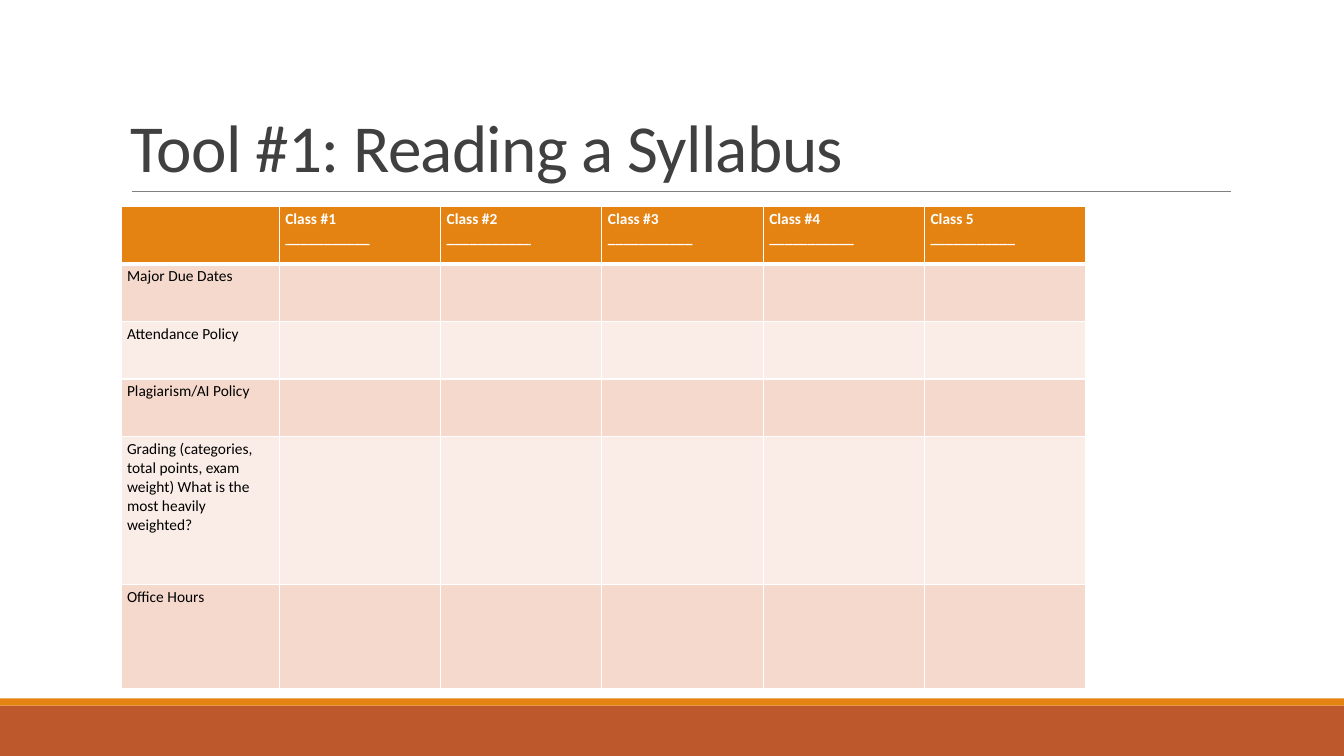
from lxml import etree
from pptx import Presentation
from pptx.dml.color import RGBColor
from pptx.enum.shapes import MSO_CONNECTOR, MSO_SHAPE
from pptx.enum.text import MSO_ANCHOR
from pptx.oxml.ns import qn
from pptx.util import Pt

PX = 9144
RECTANGLE = MSO_SHAPE.RECTANGLE
STRAIGHT = MSO_CONNECTOR.STRAIGHT
BOTTOM = MSO_ANCHOR.BOTTOM
FONT = "Calibri"
COLORS = {
    "rust": "BD582C",
    "orange": "E48312",
    "rule": "808080",
    "title": "404040",
    "white": "FFFFFF",
    "black": "000000",
    "band_dark": "F5D9CC",
    "band_light": "FAEDE7",
}
BLANK_LINE = "_" * 11
CLASSES = ["Class #1", "Class #2", "Class #3", "Class #4", "Class 5"]
TOPICS = [
    "Major Due Dates",
    "Attendance Policy",
    "Plagiarism/AI Policy",
    "Grading (categories, total points, exam weight) What is the most heavily weighted?",
    "Office Hours",
]
COLUMN_WIDTHS = [157] + [160] * len(CLASSES)
ROW_HEIGHTS = [57, 57, 57, 57, 147, 103]


def color(name):
    return RGBColor.from_string(COLORS[name])


class SlideBuilder:
    def __init__(self, slide):
        self.slide = slide
        self.shapes = slide.shapes

    def box(self, *lengths):
        return [length * PX for length in lengths]

    def style_font(self, font, size, color_name, bold=False):
        font.name = FONT
        font.size = Pt(size)
        font.bold = bold
        font.color.rgb = color(color_name)

    def bar(self, left, top, width, height, color_name):
        shape = self.shapes.add_shape(RECTANGLE, *self.box(left, top, width, height))
        shape.shadow.inherit = False
        shape.fill.solid()
        shape.fill.fore_color.rgb = color(color_name)
        shape.line.fill.background()

    def rule(self, left, right, y):
        connector = self.shapes.add_connector(STRAIGHT, *self.box(left, y, right, y))
        connector.line.color.rgb = color("rule")
        connector.line.width = Pt(0.5)
        etree.SubElement(connector._element.spPr, qn("a:effectLst"))

    def title(self, text, left, top, width, height):
        text_box = self.shapes.add_textbox(*self.box(left, top, width, height))
        frame = text_box.text_frame
        frame.word_wrap = True
        frame.vertical_anchor = BOTTOM
        paragraph = frame.paragraphs[0]
        paragraph.text = text
        paragraph.line_spacing = 0.85
        self.style_font(paragraph.font, 48, "title")
        paragraph.runs[0]._r.get_or_add_rPr().set("spc", "-50")

    def cell_borders(self, cell, top, bottom):
        properties = cell._tc.get_or_add_tcPr()
        sides = {"a:lnL": 1, "a:lnR": 1, "a:lnT": top, "a:lnB": bottom}
        for index, (tag, points) in enumerate(sides.items()):
            border = etree.Element(qn(tag), w=str(Pt(points)))
            fill = etree.SubElement(border, qn("a:solidFill"))
            etree.SubElement(fill, qn("a:srgbClr"), val=COLORS["white"])
            properties.insert(index, border)

    def cell(self, cell, text, fill, text_color, bold, top=1, bottom=1):
        cell.margin_left = cell.margin_right = 6 * PX
        cell.margin_top = cell.margin_bottom = 3 * PX
        cell.fill.solid()
        cell.fill.fore_color.rgb = color(fill)
        cell.text = text
        for paragraph in cell.text_frame.paragraphs:
            self.style_font(paragraph.font, 11, text_color, bold)
        self.cell_borders(cell, top, bottom)

    def table(self, rows, left, top, widths, heights):
        frame = self.shapes.add_table(
            len(rows), len(widths), *self.box(left, top, sum(widths), sum(heights))
        )
        table = frame.table
        for column, width in zip(table.columns, widths):
            column.width = width * PX
        for index, (row, height, texts) in enumerate(zip(table.rows, heights, rows)):
            row.height = height * PX
            for cell, text in zip(row.cells, texts):
                if index == 0:
                    self.cell(cell, text, "orange", "white", True, bottom=3)
                else:
                    band = "band_dark" if index % 2 else "band_light"
                    self.cell(cell, text, band, "black", False, top=3 if index == 1 else 1)


def main():
    presentation = Presentation()
    presentation.slide_width = 1333 * PX
    presentation.slide_height = 750 * PX
    slide = presentation.slides.add_slide(presentation.slide_layouts[6])
    builder = SlideBuilder(slide)

    builder.bar(0, 700, 1333, 50, "rust")
    builder.bar(0, 693, 1333, 7, "orange")
    builder.rule(131, 1221, 190)
    builder.title("Tool #1: Reading a Syllabus", 120, 31, 1100, 159)

    header = [""] + [f"{name}\n{BLANK_LINE}" for name in CLASSES]
    rows = [header] + [[topic] + [""] * len(CLASSES) for topic in TOPICS]
    builder.table(rows, 120, 205, COLUMN_WIDTHS, ROW_HEIGHTS)

    presentation.save("out.pptx")


if __name__ == "__main__":
    main()
